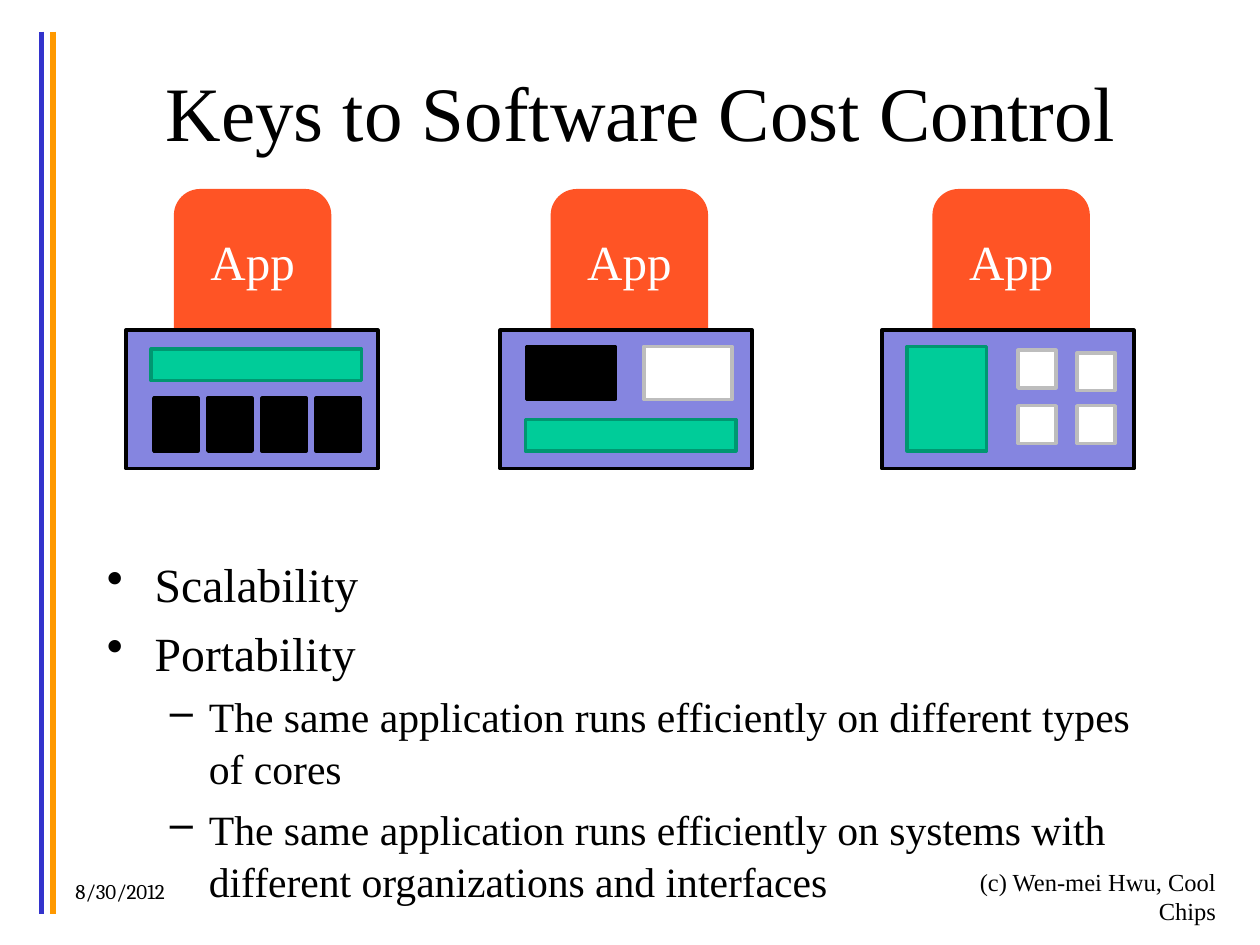
"""Build the slide on keys to software cost control."""
from lxml import etree
from pptx import Presentation
from pptx.dml.color import RGBColor
from pptx.enum.shapes import MSO_CONNECTOR, MSO_SHAPE
from pptx.enum.text import MSO_ANCHOR, PP_ALIGN
from pptx.oxml.ns import qn
from pptx.util import Inches, Pt

LINE = MSO_CONNECTOR.STRAIGHT
RECT, ROUND = MSO_SHAPE.RECTANGLE, MSO_SHAPE.ROUNDED_RECTANGLE
TOP, MID = MSO_ANCHOR.TOP, MSO_ANCHOR.MIDDLE
LEFT, MIDDLE, RIGHT = PP_ALIGN.LEFT, PP_ALIGN.CENTER, PP_ALIGN.RIGHT

FONT = "Times New Roman"
HUES = {
    "black": "000000", "white": "FFFFFF", "gray": "BDBDBD",
    "blue": "3333CC", "gold": "FF9900", "app": "FF5425",
    "chip": "8585E0", "green": "00CC99", "pine": "009771",
}
KINDS = {
    "wide": ("green", "pine"),
    "dark": ("black", "black"),
    "light": ("white", "gray"),
}
RULES = [(0.33, "blue"), (0.42, "gold")]
TITLE = "Keys to Software Cost Control"
POINTS = [
    (0, "Scalability"),
    (0, "Portability"),
    (1, "The same application runs efficiently on different types of cores"),
    (1, "The same application runs efficiently on systems with "
        "different organizations and interfaces"),
]
LEVELS = [
    {"size": 27.2, "mark": "•", "indent": (0.38, -0.38)},
    {"size": 23.8, "mark": "–", "indent": (0.81, -0.31)},
]
DATE = "8/30/2012"
CREDIT = "(c) Wen-mei Hwu, Cool Chips"

CHIP_TOP, CHIP_W, CHIP_H = 2.62, 2, 1.1
APP_TOP, APP_W, APP_H = 1.5, 1.25, 1.5
CHIPS = [
    (1, 1.38, [("wide", 0.2, 0.15, 1.67, 0.25)]
     + [("dark", 0.22 + 0.43 * i, 0.54, 0.35, 0.42) for i in range(4)]),
    (3.97, 4.37, [("wide", 0.2, 0.71, 1.67, 0.25),
                  ("dark", 0.21, 0.13, 0.7, 0.42),
                  ("light", 1.14, 0.13, 0.7, 0.42)]),
    (7, 7.4, [("wide", 0.2, 0.13, 0.63, 0.83)]
     + [("light", x, y, 0.3, 0.3)
        for x, y in [(1.08, 0.16), (1.55, 0.18), (1.08, 0.6), (1.55, 0.6)]]),
]


def color(name):
    return RGBColor.from_string(HUES[name])


def write(frame, text, size=28, font=FONT, hue="black", align=LEFT,
          anchor=TOP, mark=None, indent=(0, 0), before=0, lead=None, more=False):
    frame.word_wrap = True
    frame.vertical_anchor = anchor
    para = frame.add_paragraph() if more else frame.paragraphs[0]
    para.alignment = align
    para.space_before = Pt(before)
    if lead:
        para.line_spacing = lead
    run = para.add_run()
    run.text = text
    run.font.name, run.font.size = font, Pt(size)
    run.font.color.rgb = color(hue)
    if mark:
        props = para._p.get_or_add_pPr()
        props.set("marL", str(Inches(indent[0])))
        props.set("indent", str(Inches(indent[1])))
        etree.SubElement(props, qn("a:buChar")).set("char", mark)


def label(shapes, box, text, **style):
    write(shapes.add_textbox(*map(Inches, box)).text_frame, text, **style)


def block(shapes, kind, box, fill, edge=None):
    shape = shapes.add_shape(kind, *map(Inches, box))
    shape.shadow.inherit = False
    shape.fill.solid()
    shape.fill.fore_color.rgb = color(fill)
    if edge:
        shape.line.color.rgb = color(edge)
        shape.line.width = Pt(2)
    else:
        shape.line.fill.background()
    return shape


def rule(shapes, x, hue):
    line = shapes.add_connector(LINE, *map(Inches, (x, 0.25, x, 7.25)))
    line.line.color.rgb = color(hue)
    line.line.width = Pt(3)
    etree.SubElement(line._element.spPr, qn("a:effectLst"))


def main():
    deck = Presentation()
    deck.slide_width, deck.slide_height = Inches(10), Inches(7.5)
    shapes = deck.slides.add_slide(deck.slide_layouts[6]).shapes

    for x, hue in RULES:
        rule(shapes, x, hue)
    label(shapes, (0.75, 0.25, 8.67, 1.25), TITLE,
          size=44, align=MIDDLE, anchor=MID)

    body = shapes.add_textbox(*map(Inches, (0.75, 4.34, 8.67, 2.8))).text_frame
    for i, (level, text) in enumerate(POINTS):
        write(body, text, more=i > 0, before=5 if i else 0, lead=1.04,
              **LEVELS[level])

    label(shapes, (0.5, 6.92, 3.83, 0.5), DATE, size=12, font="Cambria")
    label(shapes, (7.67, 6.83, 2.08, 0.5), CREDIT, size=14, align=RIGHT)

    for left, app_x, parts in CHIPS:
        app = block(shapes, ROUND, (app_x, APP_TOP, APP_W, APP_H), "app")
        app.text_frame.margin_top = 0
        app.text_frame.margin_bottom = Inches(0.36)
        write(app.text_frame, "App", hue="white", align=MIDDLE, anchor=MID)
        block(shapes, RECT, (left, CHIP_TOP, CHIP_W, CHIP_H), "chip", "black")
        for kind, x, y, w, h in parts:
            block(shapes, RECT, (left + x, CHIP_TOP + y, w, h), *KINDS[kind])

    deck.save("out.pptx")


if __name__ == "__main__":
    main()
